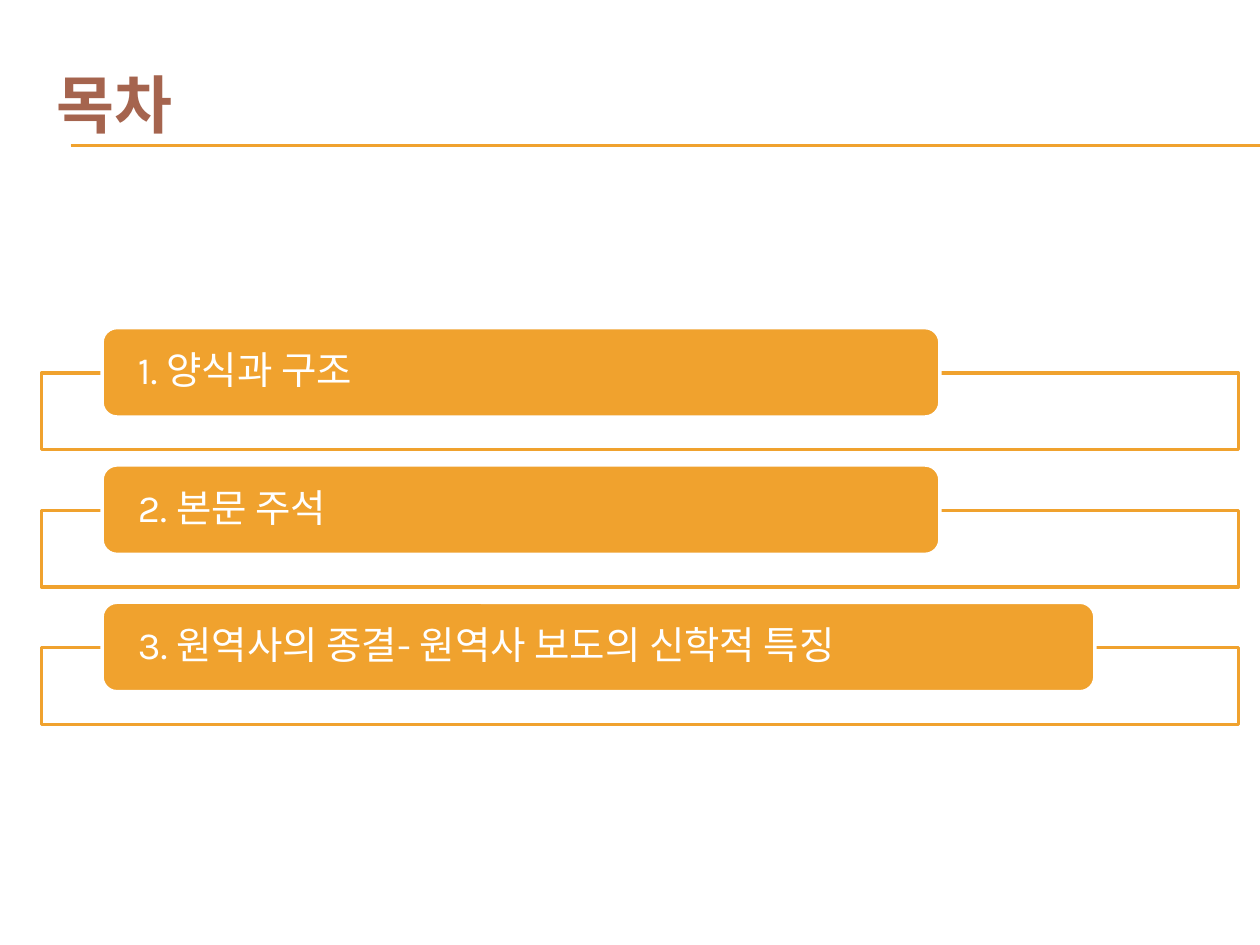
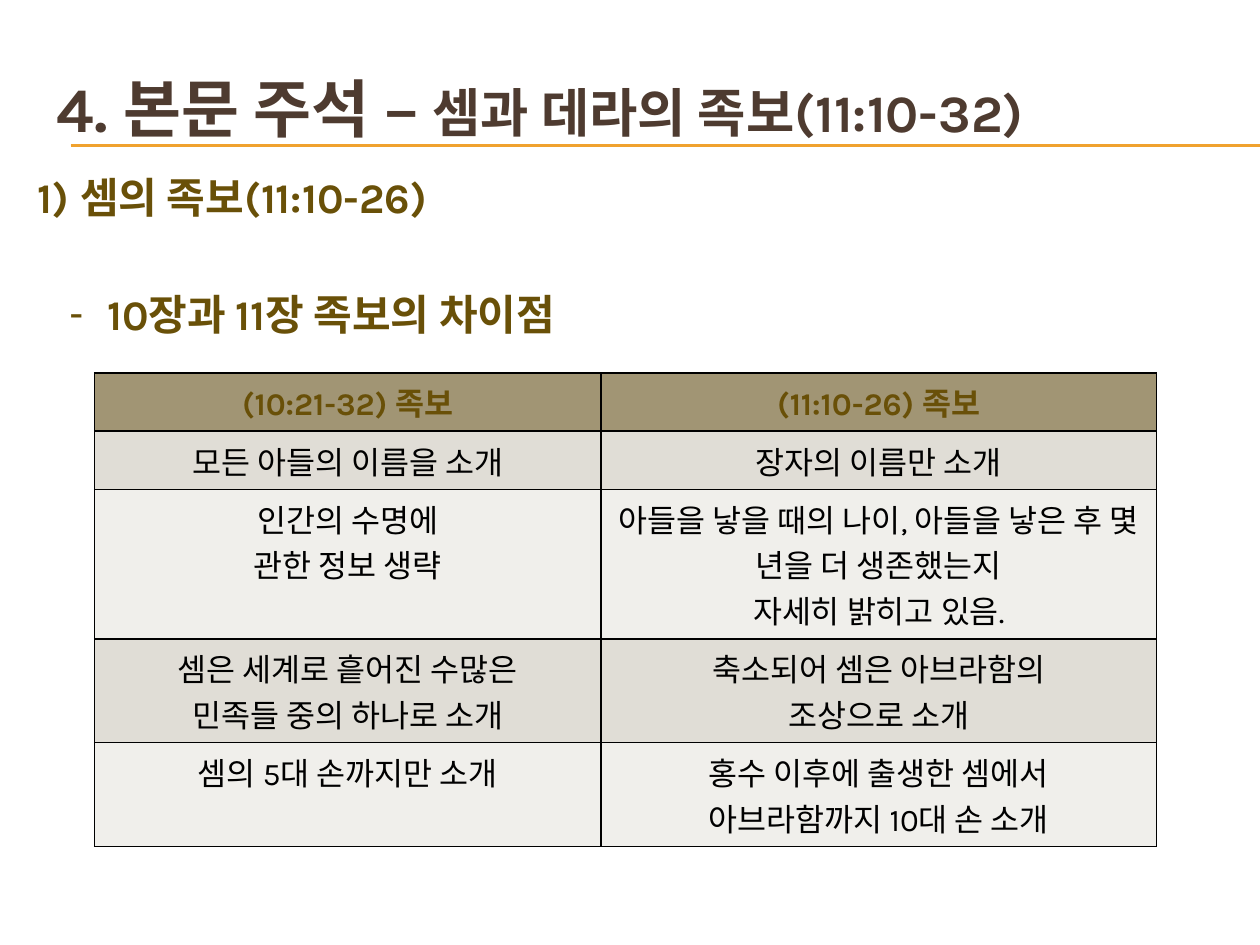
"""Build a contents slide and a genealogy comparison slide."""
import pptx
import pptx.dml.color
import pptx.enum.shapes
import pptx.enum.text
import pptx.oxml
import pptx.oxml.ns
import pptx.util
from pptx.util import Inches, Pt

RGBColor = pptx.dml.color.RGBColor
ORANGE = RGBColor(0xF0, 0xA2, 0x2E)
RUST = RGBColor(0xA5, 0x64, 0x4E)
BROWN = RGBColor(0x4E, 0x3B, 0x30)
OLIVE = RGBColor(0x69, 0x50, 0x08)
KHAKI = RGBColor(0xA1, 0x95, 0x74)
SAND = RGBColor(0xE0, 0xDD, 0xD6)
IVORY = RGBColor(0xF0, 0xEF, 0xEB)
WHITE = RGBColor(0xFF, 0xFF, 0xFF)
BLACK = RGBColor(0, 0, 0)
FONT = "Karla"
LEFT = pptx.enum.text.PP_ALIGN.LEFT
CENTER = pptx.enum.text.PP_ALIGN.CENTER
MIDDLE = pptx.enum.text.MSO_ANCHOR.MIDDLE
SHAPES = pptx.enum.shapes.MSO_SHAPE


def write(paragraph, text, size, color, bold=False, align=LEFT):
    """Add one formatted run to a paragraph."""
    paragraph.alignment = align
    run = paragraph.add_run()
    run.text = text
    run.font.name = FONT
    run.font.size = Pt(size)
    run.font.bold = bold
    run.font.color.rgb = color


def add_xml(parent, xml):
    """Append a drawing element written as text."""
    namespace = pptx.oxml.ns.nsdecls("a")
    parent.append(pptx.oxml.parse_xml(xml.replace(" NS", " " + namespace, 1)))


deck = pptx.Presentation()
deck.slide_width, deck.slide_height = Inches(10), Inches(7.5)
contents = deck.slides.add_slide(deck.slide_layouts[5])
genealogy = deck.slides.add_slide(deck.slide_layouts[1])

titles = [
    (contents, (0.35, 0.36, 9.5, 0.92), RUST, [("목차", 36)]),
    (genealogy, (0.35, 0.29, 9.48, 1.13), BROWN,
     [("4. 본문 주석 – ", 36), ("셈과 데라의 족보(11:10-32)", 30)]),
]
for slide, place, color, parts in titles:
    for rule_y in (1.15, 1.16):
        rule = slide.shapes.add_connector(
            pptx.enum.shapes.MSO_CONNECTOR.STRAIGHT,
            Inches(0.56), Inches(rule_y), Inches(10), Inches(rule_y))
        rule.line.color.rgb = ORANGE
        rule.line.width = Pt(0.75)
        add_xml(rule._element.spPr, "<a:effectLst NS/>")
    title = slide.shapes.title
    title.left, title.top, title.width, title.height = map(Inches, place)
    title.text_frame.auto_size = pptx.enum.text.MSO_AUTO_SIZE.NONE
    title.text_frame.vertical_anchor = MIDDLE
    for text, size in parts:
        write(title.text_frame.paragraphs[0], text, size, color, bold=True)

chapters = [
    ("1. 양식과 구조", 6.65),
    ("2. 본문 주석", 6.65),
    ("3. 원역사의 종결- 원역사 보도의 신학적 특징", 7.88),
]
for index, (chapter, pill_width) in enumerate(chapters):
    top = 2.6 + 1.09 * index
    frame = contents.shapes.add_shape(
        SHAPES.RECTANGLE, Inches(0.33), Inches(top + 0.36), Inches(9.5), Inches(0.61))
    pill = contents.shapes.add_shape(
        SHAPES.ROUNDED_RECTANGLE, Inches(0.81), Inches(top), Inches(pill_width), Inches(0.71))
    for shape, fill, outline in ((frame, WHITE, ORANGE), (pill, ORANGE, WHITE)):
        shape.shadow.inherit = False
        shape.fill.solid()
        shape.fill.fore_color.rgb = fill
        shape.line.color.rgb = outline
        shape.line.width = Pt(2)
    label = pill.text_frame
    label.word_wrap = True
    label.vertical_anchor = MIDDLE
    label.margin_left = label.margin_right = Inches(0.25)
    label.margin_top = label.margin_bottom = 0
    label.paragraphs[0].line_spacing = 0.9
    write(label.paragraphs[0], chapter, 22, WHITE)

outline = genealogy.placeholders[1]
outline.left, outline.top = Inches(0.12), Inches(1.31)
outline.width, outline.height = Inches(9.88), Inches(5.98)
outline.text_frame.auto_size = pptx.enum.text.MSO_AUTO_SIZE.NONE
headings = [
    ("1) 셈의 족보(11:10-26)", 5, 0.08, 0, "<a:buNone NS/>"),
    ("10장과 11장 족보의 차이점", 38, 0.63, -0.3, '<a:buChar NS char="-"/>'),
]
for index, (text, space, margin, indent, bullet) in enumerate(headings):
    heading = outline.text_frame.paragraphs[0] if index == 0 else outline.text_frame.add_paragraph()
    write(heading, text, 24, OLIVE, bold=True)
    heading.space_before = Pt(space)
    properties = heading._p.get_or_add_pPr()
    properties.set("marL", str(Inches(margin)))
    properties.set("indent", str(Inches(indent)))
    add_xml(properties, bullet)

comparison = [
    ("(10:21-32) 족보", "(11:10-26) 족보"),
    ("모든 아들의 이름을 소개", "장자의 이름만 소개"),
    ("인간의 수명에\n관한 정보 생략",
     "아들을 낳을 때의 나이, 아들을 낳은 후 몇 년을 더 생존했는지\n자세히 밝히고 있음."),
    ("셈은 세계로 흩어진 수많은\n민족들 중의 하나로 소개", "축소되어 셈은 아브라함의\n조상으로 소개"),
    ("셈의 5대 손까지만 소개", "홍수 이후에 출생한 셈에서\n아브라함까지 10대 손 소개"),
]
table = genealogy.shapes.add_table(
    5, 2, Inches(0.75), Inches(2.96), Inches(8.43), Inches(2.81)).table
table.horz_banding = False
for column, width in zip(table.columns, (4.02, 4.41)):
    column.width = Inches(width)
for row, height in zip(table.rows, (0.41, 0.41, 0.41, 0.82, 0.76)):
    row.height = Inches(height)
for row_index, texts in enumerate(comparison):
    is_header = row_index == 0
    fill = KHAKI if is_header else (IVORY, SAND)[row_index % 2]
    for column_index, text in enumerate(texts):
        cell = table.cell(row_index, column_index)
        for line_index, line in enumerate(text.split("\n")):
            paragraph = (cell.text_frame.add_paragraph() if line_index
                         else cell.text_frame.paragraphs[0])
            write(paragraph, line, 18, OLIVE if is_header else BLACK,
                  bold=is_header, align=CENTER)
        cell_properties = cell._tc.get_or_add_tcPr()
        for side in ("lnL", "lnR", "lnT", "lnB"):
            add_xml(cell_properties,
                    f'<a:{side} NS w="{Pt(1)}"><a:solidFill>'
                    f'<a:srgbClr val="{BLACK}"/></a:solidFill></a:{side}>')
        cell.fill.solid()
        cell.fill.fore_color.rgb = fill

deck.save("out.pptx")
